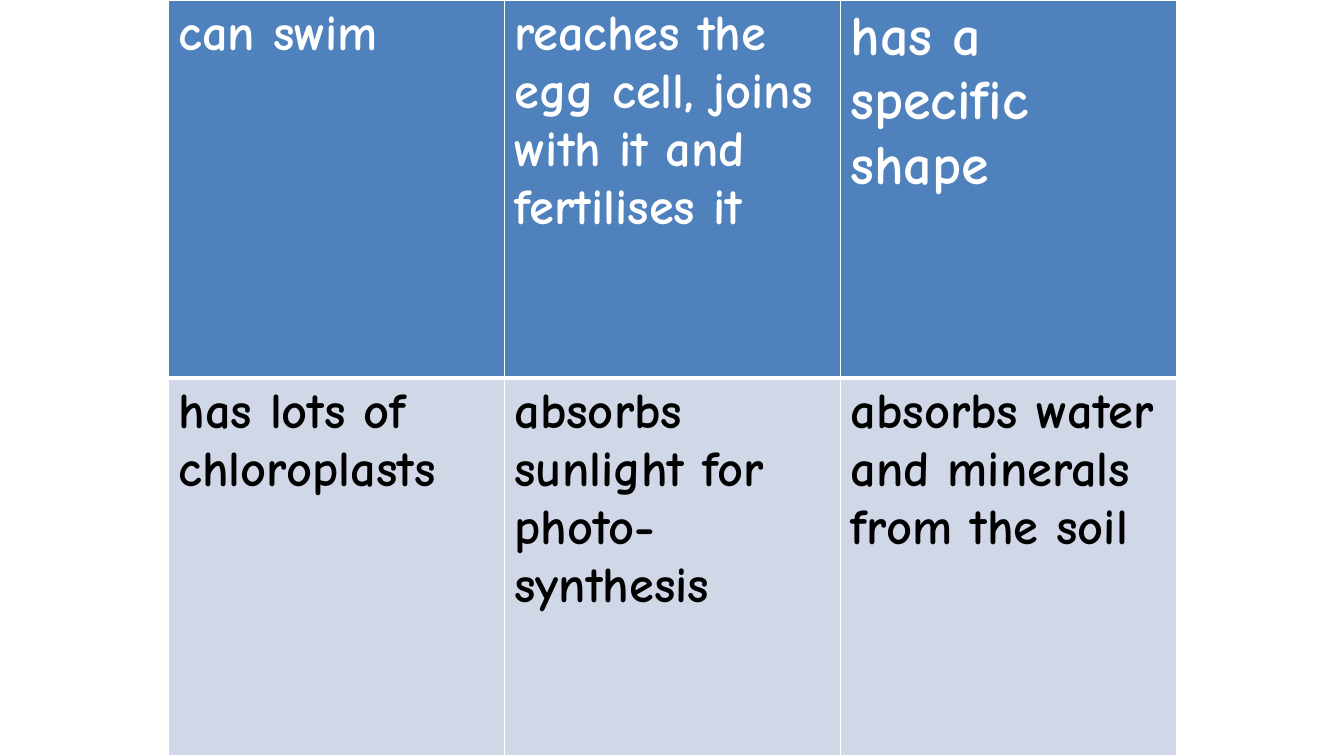
from dataclasses import dataclass

import lxml.etree
import pptx
import pptx.dml.color
import pptx.oxml.ns
import pptx.table
import pptx.util

COLOURS = {
    "header": "4F81BD",
    "body": "D0D8E8",
    "header_text": "FFFFFF",
    "body_text": "000000",
    "border": "FFFFFF",
}


@dataclass
class Feature:
    wording: str
    size: int = 36


@dataclass
class FeatureRow:
    features: list[Feature]
    fill: str
    text: str
    borders: dict[str, int]


FEATURE_ROWS = [
    FeatureRow(
        [
            Feature("can swim"),
            Feature("reaches the egg cell, joins with it and fertilises it"),
            Feature("has a specific shape", 40),
        ],
        "header",
        "header_text",
        {"lnL": 1, "lnR": 1, "lnT": 1, "lnB": 3},
    ),
    FeatureRow(
        [
            Feature("has lots of chloroplasts"),
            Feature("absorbs sunlight for photo-synthesis"),
            Feature("absorbs water and minerals from the soil"),
        ],
        "body",
        "body_text",
        {"lnL": 1, "lnR": 1, "lnT": 3, "lnB": 1},
    ),
]


def colour(name: str) -> pptx.dml.color.RGBColor:
    return pptx.dml.color.RGBColor.from_string(COLOURS[name])


def draw_borders(cell: pptx.table._Cell, borders: dict[str, int]) -> None:
    qn = pptx.oxml.ns.qn
    properties = cell._tc.get_or_add_tcPr()
    for side, width in borders.items():
        edge = lxml.etree.SubElement(
            properties, qn(f"a:{side}"), w=str(pptx.util.Pt(width))
        )
        edge_fill = lxml.etree.SubElement(edge, qn("a:solidFill"))
        lxml.etree.SubElement(edge_fill, qn("a:srgbClr"), val=COLOURS["border"])


def draw_feature(cell: pptx.table._Cell, feature: Feature, row: FeatureRow) -> None:
    draw_borders(cell, row.borders)
    cell.fill.solid()
    cell.fill.fore_color.rgb = colour(row.fill)
    wording = cell.text_frame.paragraphs[0].add_run()
    wording.text = feature.wording
    font_format = {
        "name": "Comic Neue",
        "size": pptx.util.Pt(feature.size),
        "bold": True,
    }
    for attribute, value in font_format.items():
        setattr(wording.font, attribute, value)
    wording.font.color.rgb = colour(row.text)


def main() -> None:
    inches = pptx.util.Inches
    presentation = pptx.Presentation()
    presentation.slide_width = inches(13.33)
    presentation.slide_height = inches(7.5)
    slide = presentation.slides.add_slide(presentation.slide_layouts[6])
    feature_grid = slide.shapes.add_table(
        len(FEATURE_ROWS),
        len(FEATURE_ROWS[0].features),
        inches(1.67),
        inches(0),
        inches(10),
        inches(7.5),
    ).table
    for row_index, row in enumerate(FEATURE_ROWS):
        for column_index, feature in enumerate(row.features):
            draw_feature(feature_grid.cell(row_index, column_index), feature, row)
    presentation.save("out.pptx")


if __name__ == "__main__":
    main()
